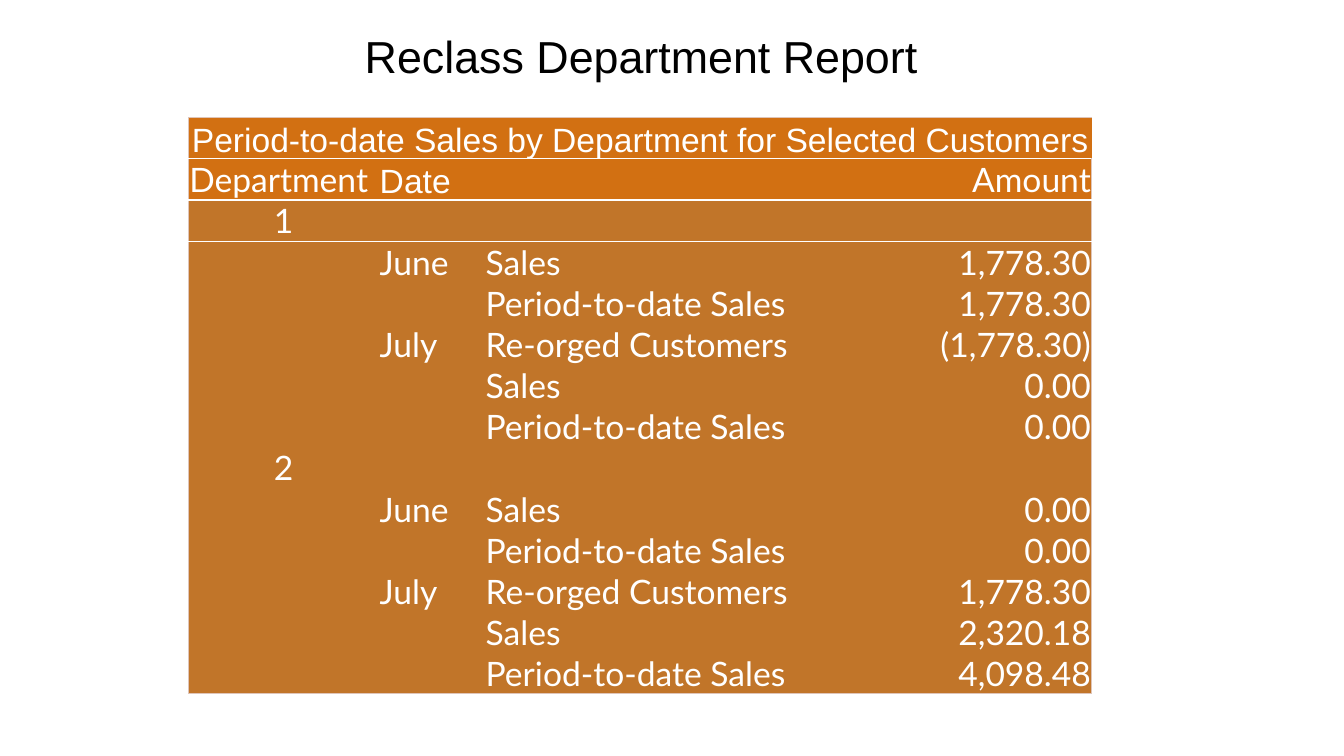
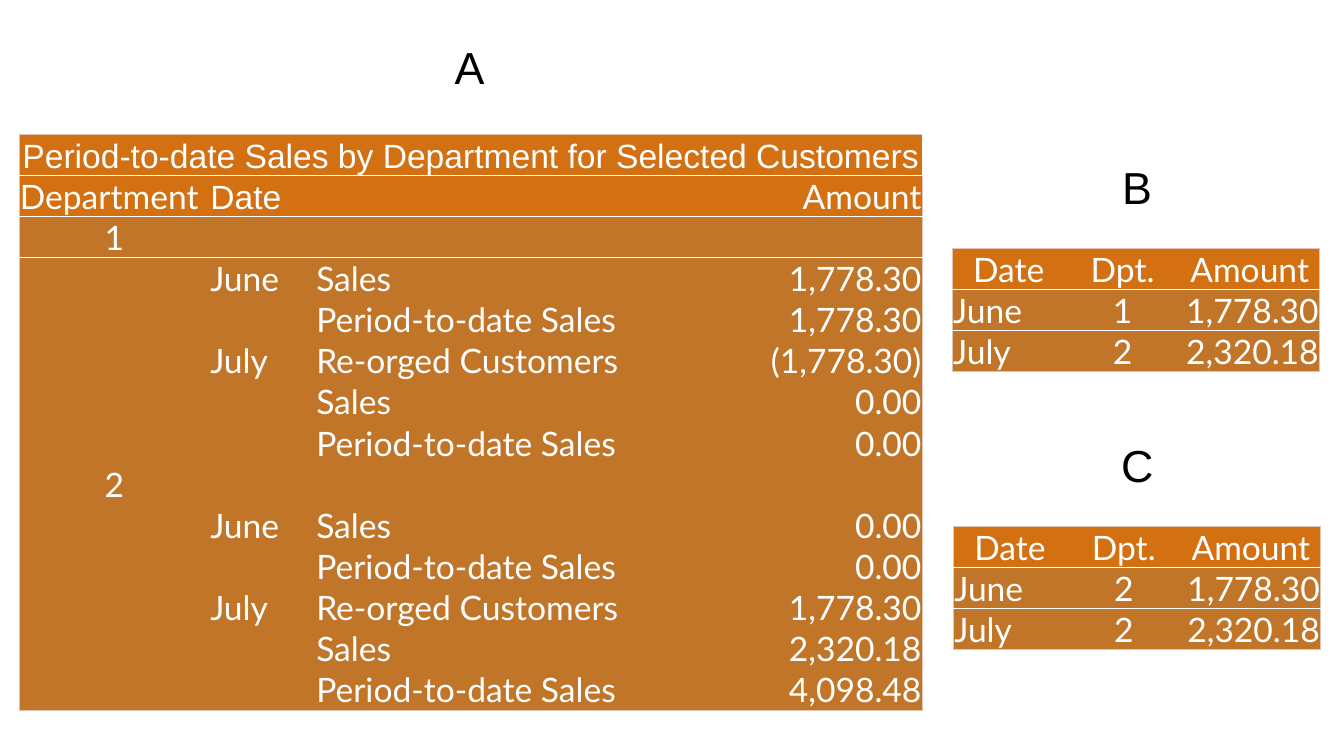
from dataclasses import dataclass

from lxml import etree
from pptx import Presentation
from pptx import util as u
from pptx.dml.color import RGBColor
from pptx.enum import text
from pptx.oxml.ns import qn
from pptx.slide import Slide
from pptx.table import _Cell as Cell

WHITE = RGBColor(0xFF, 0xFF, 0xFF)
BLACK = RGBColor(0x00, 0x00, 0x00)
HEADING_FILL = RGBColor(0xD2, 0x70, 0x12)
BODY_FILL = RGBColor(0xC1, 0x75, 0x29)
FRAME = RGBColor(0xDF, 0xC5, 0xB9)

TITLE_FONT = "Arial"
BODY_FONT = "Lato"
TITLE_SIZE = u.Pt(32)
CELL_SIZE = u.Pt(24)
LINE_SPACING = 0.9
ROW_HEIGHT = u.Cm(14.48 / 14)
CELL_INSET = u.Cm(0.02)

LEFT, CENTER, RIGHT = text.PP_ALIGN.LEFT, text.PP_ALIGN.CENTER, text.PP_ALIGN.RIGHT


@dataclass(frozen=True)
class Title:
    label: str
    left: float
    top: float
    width: float


@dataclass(frozen=True)
class Column:
    heading: str
    width: float
    heading_align: text.PP_ALIGN
    body_align: text.PP_ALIGN
    heading_font: str = BODY_FONT


@dataclass(frozen=True)
class Report:
    columns: tuple[Column, ...]
    entries: tuple[tuple[str, ...], ...]
    caption: str = ""


@dataclass(frozen=True)
class Border:
    color: RGBColor
    points: float


FRAME_LINE = Border(FRAME, 0.75)
RULE_LINE = Border(WHITE, 1)

DEPARTMENT_REPORT = Report(
    columns=(
        Column("Department", 4.8, LEFT, CENTER),
        Column("Date", 2.67, LEFT, LEFT, TITLE_FONT),
        Column("", 10.87, LEFT, LEFT),
        Column("Amount", 4.42, RIGHT, RIGHT),
    ),
    entries=(
        ("1", "", "", ""),
        ("", "June", "Sales", "1,778.30"),
        ("", "", "Period-to-date Sales", "1,778.30"),
        ("", "July", "Re-orged Customers", "(1,778.30)"),
        ("", "", "Sales", "0.00"),
        ("", "", "Period-to-date Sales", "0.00"),
        ("2", "", "", ""),
        ("", "June", "Sales", "0.00"),
        ("", "", "Period-to-date Sales", "0.00"),
        ("", "July", "Re-orged Customers", "1,778.30"),
        ("", "", "Sales", "2,320.18"),
        ("", "", "Period-to-date Sales", "4,098.48"),
    ),
    caption="Period-to-date Sales by Department for Selected Customers",
)


def monthly_report(june_department: str, july_department: str) -> Report:
    return Report(
        columns=(
            Column("Date", 2.84, CENTER, LEFT),
            Column("Dpt.", 2.9, CENTER, CENTER),
            Column("Amount", 3.51, CENTER, RIGHT),
        ),
        entries=(
            ("June", june_department, "1,778.30"),
            ("July", july_department, "2,320.18"),
        ),
    )


def format_paragraph(paragraph, align: text.PP_ALIGN, font: str,
                     size: u.Length, color: RGBColor) -> None:
    paragraph.alignment = align
    paragraph.line_spacing = LINE_SPACING
    for styled in (paragraph.font, *(run.font for run in paragraph.runs)):
        styled.name = font
        styled.size = size
        styled.color.rgb = color


def add_title(slide: Slide, title: Title) -> None:
    box = slide.shapes.add_textbox(
        u.Cm(title.left), u.Cm(title.top), u.Cm(title.width), u.Cm(1.49))
    frame = box.text_frame
    frame.word_wrap = False
    frame.auto_size = text.MSO_AUTO_SIZE.SHAPE_TO_FIT_TEXT
    frame.text = title.label
    format_paragraph(frame.paragraphs[0], CENTER, TITLE_FONT, TITLE_SIZE, BLACK)


def set_border(cell: Cell, side: str, border: Border | None) -> None:
    properties = cell._tc.get_or_add_tcPr()
    line = etree.SubElement(properties, qn(f"a:ln{side}"))
    if border is None:
        line.set("w", "0")
        etree.SubElement(line, qn("a:noFill"))
        return
    line.set("w", str(u.Pt(border.points)))
    fill = etree.SubElement(line, qn("a:solidFill"))
    etree.SubElement(fill, qn("a:srgbClr")).set("val", str(border.color))


def fill_cell(cell: Cell, words: str, align: text.PP_ALIGN, font: str) -> None:
    cell.text_frame.text = words
    cell.vertical_anchor = text.MSO_ANCHOR.BOTTOM
    cell.margin_left = cell.margin_right = cell.margin_top = CELL_INSET
    cell.margin_bottom = 0
    format_paragraph(cell.text_frame.paragraphs[0], align, font, CELL_SIZE, WHITE)


def add_report(slide: Slide, report: Report, left: float, top: float) -> None:
    columns = report.columns
    heading_rows = 2 if report.caption else 1
    row_count = heading_rows + len(report.entries)
    last_column = len(columns) - 1
    total_width = u.Cm(sum(column.width for column in columns))
    table = slide.shapes.add_table(
        row_count, len(columns), u.Cm(left), u.Cm(top),
        total_width, ROW_HEIGHT * row_count).table
    table.first_row = table.horz_banding = False
    for row in table.rows:
        row.height = ROW_HEIGHT

    def horizontal_line(edge: int) -> Border | None:
        if edge in (0, row_count):
            return FRAME_LINE
        return RULE_LINE if edge <= heading_rows + 1 else None

    for c, column in enumerate(columns):
        table.columns[c].width = u.Cm(column.width)
        for r in range(row_count):
            cell = table.cell(r, c)
            set_border(cell, "L", FRAME_LINE if c == 0 else None)
            set_border(cell, "R", FRAME_LINE if c == last_column else None)
            set_border(cell, "T", horizontal_line(r))
            set_border(cell, "B", horizontal_line(r + 1))
            cell.fill.solid()
            cell.fill.fore_color.rgb = HEADING_FILL if r < heading_rows else BODY_FILL
            if r >= heading_rows:
                entry = report.entries[r - heading_rows]
                fill_cell(cell, entry[c], column.body_align, BODY_FONT)
            elif r == heading_rows - 1:
                fill_cell(cell, column.heading, column.heading_align, column.heading_font)

    if report.caption:
        caption_cell = table.cell(0, 0)
        caption_cell.merge(table.cell(0, last_column))
        fill_cell(caption_cell, report.caption, CENTER, TITLE_FONT)


def main() -> None:
    deck = Presentation()
    deck.slide_width, deck.slide_height = u.Cm(33.87), u.Cm(19.05)
    blank = deck.slide_layouts[6]

    overview = deck.slides.add_slide(blank)
    add_report(overview, DEPARTMENT_REPORT, 4.75, 2.97)
    add_title(overview, Title("Reclass Department Report", 8.89, 0.76, 14.55))

    comparison = deck.slides.add_slide(blank)
    add_report(comparison, DEPARTMENT_REPORT, 0.48, 3.38)
    add_report(comparison, monthly_report("1", "2"), 24, 6.27)
    add_report(comparison, monthly_report("2", "2"), 24.03, 13.26)
    for title in (
        Title("A", 11.2, 1.02, 1.27),
        Title("B", 28.02, 4.06, 1.27),
        Title("C", 27.99, 11.05, 1.35),
    ):
        add_title(comparison, title)

    deck.save("out.pptx")


if __name__ == "__main__":
    main()
